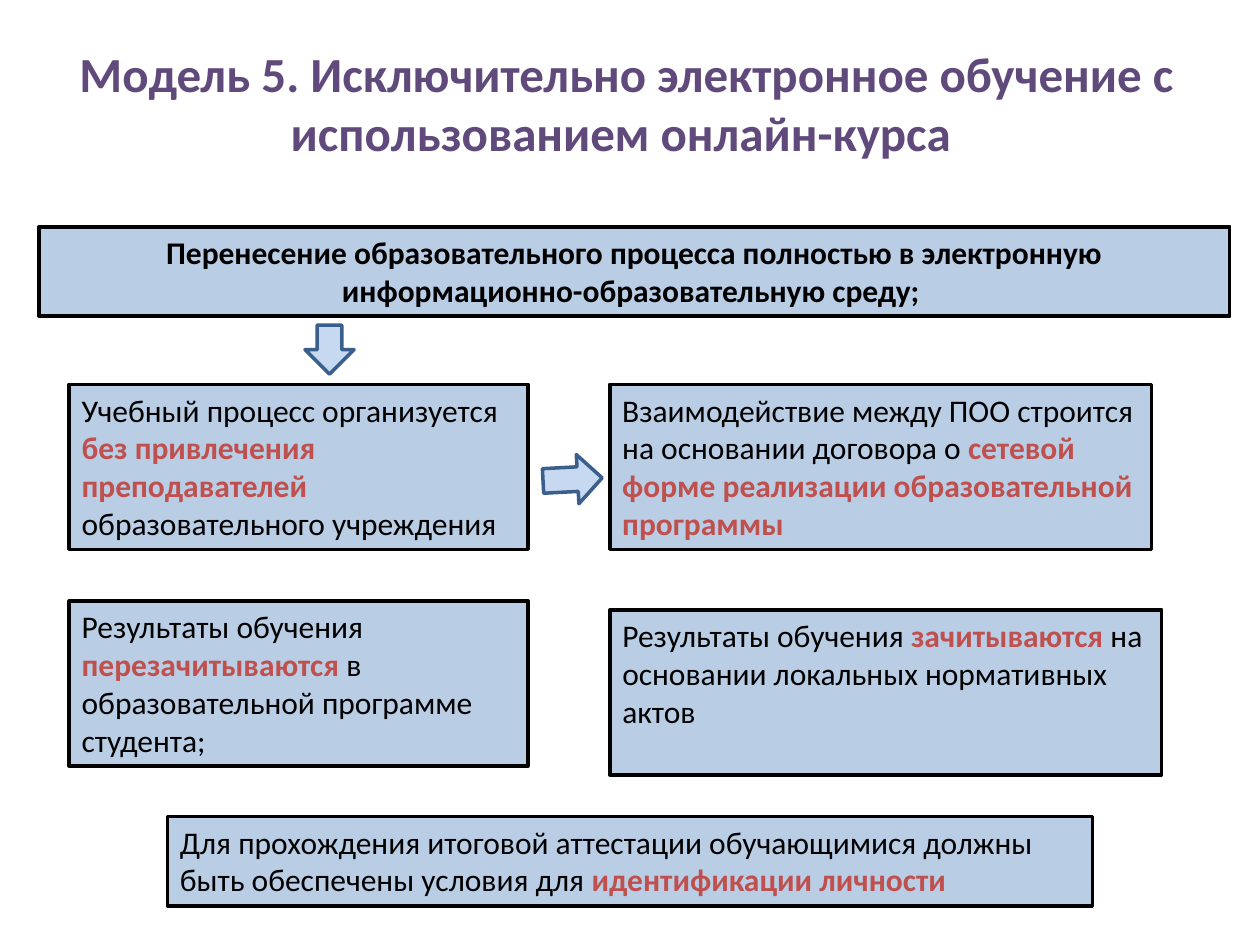
from pptx import Presentation
from pptx.dml.color import RGBColor
from pptx.enum.shapes import MSO_SHAPE
from pptx.enum.text import MSO_ANCHOR, MSO_AUTO_SIZE, PP_ALIGN
from pptx.util import Inches, Pt

PURPLE = RGBColor(0x60, 0x4A, 0x7B)
BLACK = RGBColor(0x00, 0x00, 0x00)
RED = RGBColor(0xC0, 0x50, 0x4D)
PANEL_BLUE = RGBColor(0xB9, 0xCD, 0xE5)
ARROW_BLUE = RGBColor(0xC6, 0xD9, 0xF1)
ARROW_EDGE = RGBColor(0x3A, 0x5F, 0x8C)

TITLE = {"name": "Calibri", "size": Pt(28), "bold": True}
PLAIN = {"name": "Calibri", "size": Pt(18), "bold": False}
STRONG = {**PLAIN, "bold": True}

LEFT_COLUMN, RIGHT_COLUMN = 0.55, 4.84
LEFT_WIDTH = 3.64
TWO_LINES, FOUR_LINES = 0.71, 1.31

HEADING = ("Перенесение образовательного процесса полностью в электронную "
           "информационно-образовательную среду; ")

# Each statement: position and size, then its wording with *emphasis* marked.
STATEMENTS = [
    ((LEFT_COLUMN, 3.05, LEFT_WIDTH, FOUR_LINES),
     "Учебный процесс организуется *без привлечения преподавателей *"
     "образовательного учреждения"),
    ((RIGHT_COLUMN, 3.05, 4.3, FOUR_LINES),
     "Взаимодействие между ПОО строится на основании договора о "
     "*сетевой форме реализации образовательной программы*"),
    ((LEFT_COLUMN, 4.77, LEFT_WIDTH, FOUR_LINES),
     "Результаты обучения *перезачитываются *в образовательной программе студента;"),
    ((RIGHT_COLUMN, 4.84, 4.38, FOUR_LINES),
     "Результаты обучения *зачитываются *на основании локальных нормативных актов"),
    ((1.33, 6.48, 7.34, TWO_LINES),
     "Для прохождения итоговой аттестации обучающимися должны быть обеспечены "
     "условия для *идентификации личности*"),
]


def add_run(paragraph, text, font_format, color):
    run = paragraph.add_run()
    run.text = text
    for attribute, value in font_format.items():
        setattr(run.font, attribute, value)
    run.font.color.rgb = color


def add_filled_shape(slide, preset, place, fill, edge):
    shape = slide.shapes.add_shape(preset, *map(Inches, place))
    shape.shadow.inherit = False
    shape.fill.solid()
    shape.fill.fore_color.rgb = fill
    shape.line.color.rgb = edge
    shape.line.width = Pt(2)
    return shape


def add_panel(slide, place, alignment):
    """Add a bordered blue panel and return its paragraph for filling."""
    panel = add_filled_shape(slide, MSO_SHAPE.RECTANGLE, place, PANEL_BLUE, BLACK)
    frame_format = {"word_wrap": True, "vertical_anchor": MSO_ANCHOR.TOP,
                    "auto_size": MSO_AUTO_SIZE.SHAPE_TO_FIT_TEXT}
    for attribute, value in frame_format.items():
        setattr(panel.text_frame, attribute, value)
    paragraph = panel.text_frame.paragraphs[0]
    paragraph.alignment = alignment
    return paragraph


def add_statement(slide, place, wording):
    paragraph = add_panel(slide, place, PP_ALIGN.LEFT)
    for index, part in enumerate(wording.split("*")):
        if part:
            emphasised = index % 2
            add_run(paragraph, part, STRONG if emphasised else PLAIN,
                    RED if emphasised else BLACK)


def add_title(slide):
    title = slide.shapes.add_textbox(*map(Inches, (0.47, 0.39, 9, 1.25)))
    frame_format = {"word_wrap": True, "vertical_anchor": MSO_ANCHOR.MIDDLE,
                    "margin_top": 0, "margin_bottom": Inches(0.41)}
    for attribute, value in frame_format.items():
        setattr(title.text_frame, attribute, value)
    paragraph = title.text_frame.paragraphs[0]
    paragraph.alignment = PP_ALIGN.CENTER
    add_run(paragraph, "Модель 5. Исключительно электронное обучение с "
            "использованием онлайн-курса ", TITLE, PURPLE)


def add_arrow(slide, preset, place, rotation=0):
    arrow = add_filled_shape(slide, preset, place, ARROW_BLUE, ARROW_EDGE)
    arrow.rotation = rotation


def main():
    presentation = Presentation()
    presentation.slide_width = Inches(10)
    presentation.slide_height = Inches(7.5)
    slide = presentation.slides.add_slide(presentation.slide_layouts[6])

    add_title(slide)
    heading = add_panel(slide, (0.31, 1.8, 9.45, TWO_LINES), PP_ALIGN.CENTER)
    add_run(heading, HEADING, STRONG, BLACK)
    for place, wording in STATEMENTS:
        add_statement(slide, place, wording)
    add_arrow(slide, MSO_SHAPE.DOWN_ARROW, (2.42, 2.58, 0.39, 0.39))
    add_arrow(slide, MSO_SHAPE.RIGHT_ARROW, (4.31, 3.61, 0.47, 0.39), rotation=-3)

    presentation.save("out.pptx")


if __name__ == "__main__":
    main()
